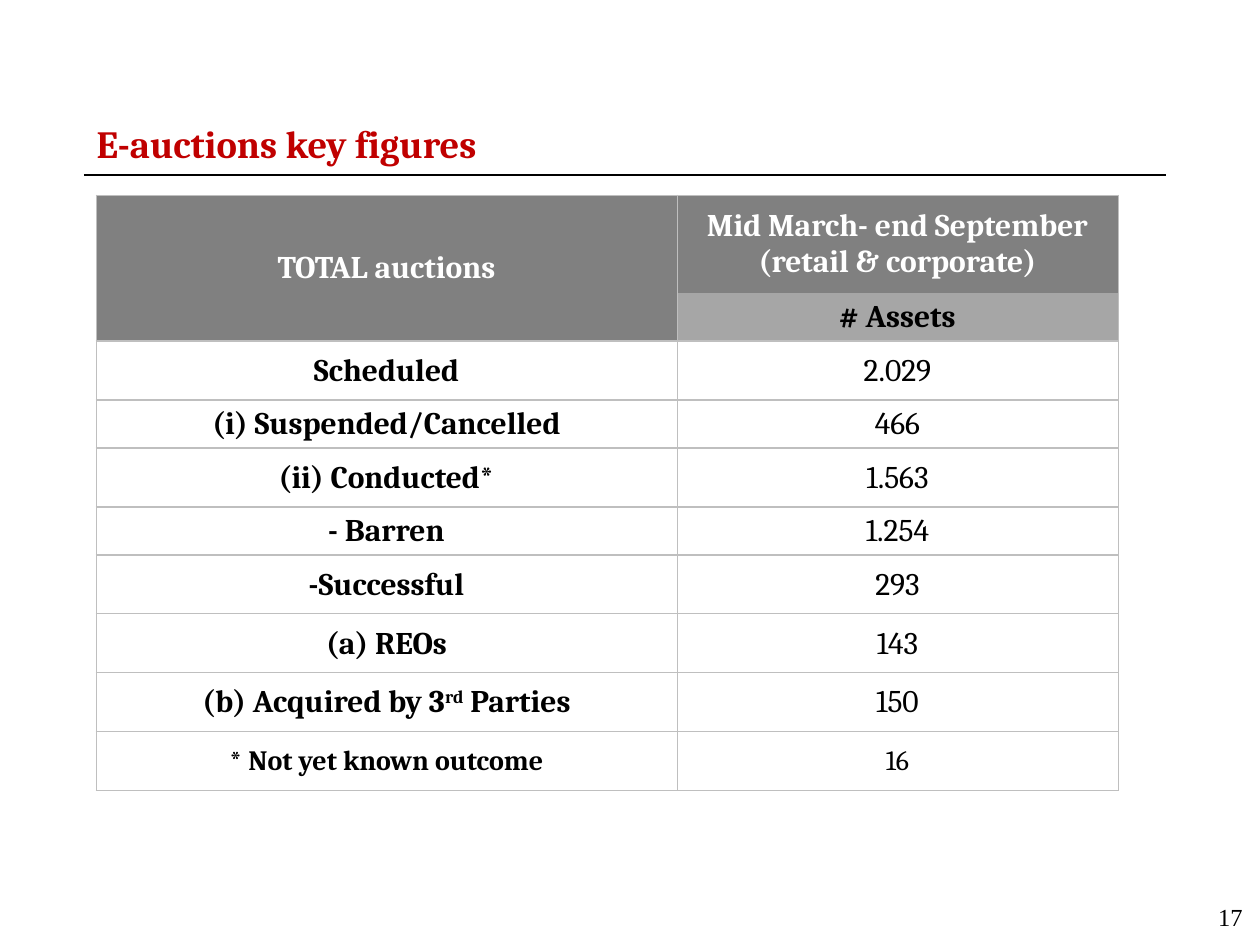
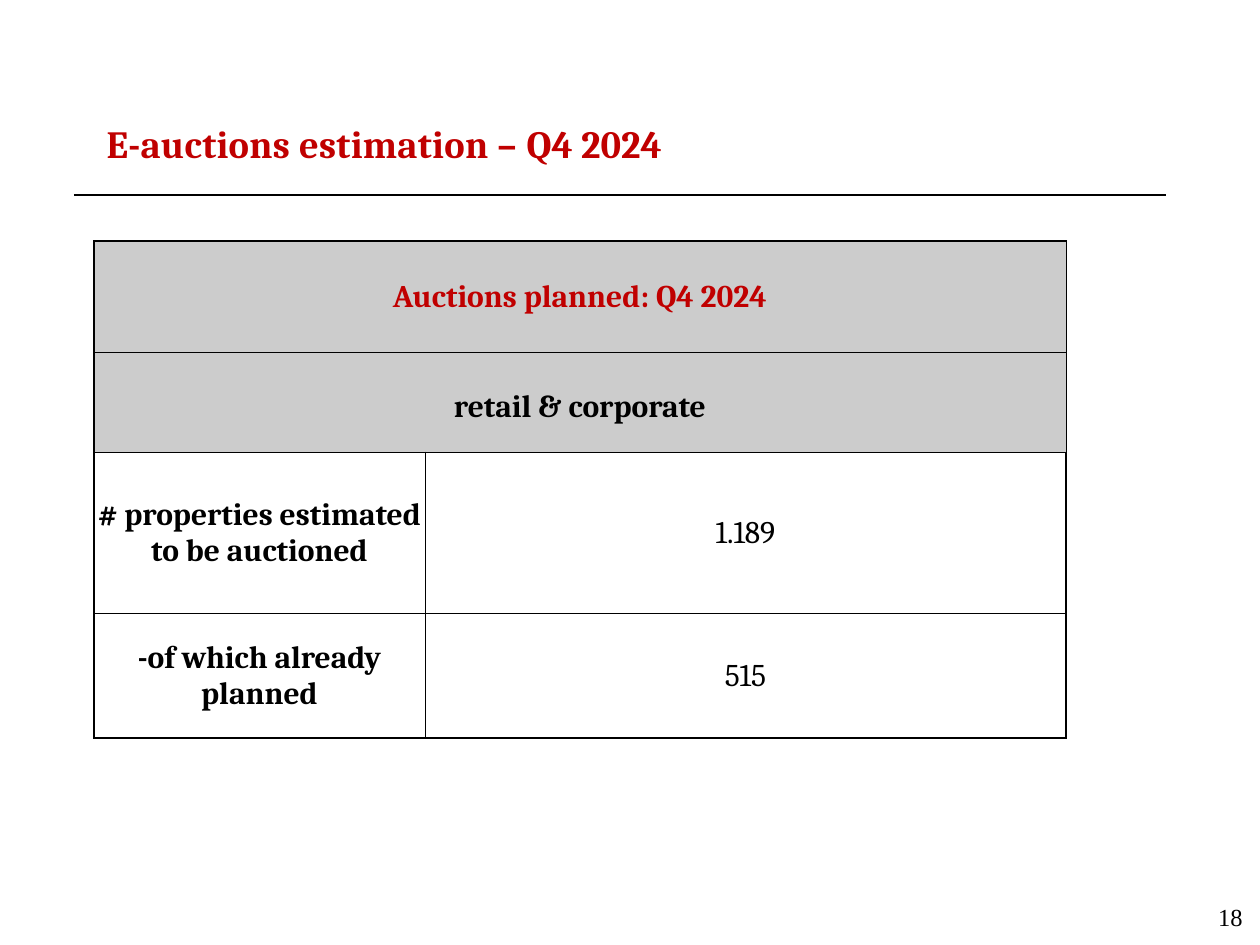
from itertools import product

from lxml import etree
from pptx import Presentation
from pptx.dml.color import RGBColor
from pptx.enum.shapes import MSO_CONNECTOR
from pptx.enum.text import MSO_ANCHOR, MSO_AUTO_SIZE, PP_ALIGN
from pptx.oxml.ns import qn
from pptx.util import Pt

PX = 914400 / 126
STRAIGHT = MSO_CONNECTOR.STRAIGHT
LEFT, CENTER, RIGHT = PP_ALIGN.LEFT, PP_ALIGN.CENTER, PP_ALIGN.RIGHT
MIDDLE = MSO_ANCHOR.MIDDLE
NO_AUTOFIT = MSO_AUTO_SIZE.NONE
TITLE_ONLY = 5

COLORS = {
    "red": "C00000",
    "black": "000000",
    "white": "FFFFFF",
    "head": "808080",
    "subhead": "A6A6A6",
    "planned": "CCCCCC",
    "grid": "BFBFBF",
}
SERIF, PAGE_FONT = "Cambria", "Times New Roman"


def px(length):
    return round(length * PX)


def rgb(name):
    return RGBColor.from_string(COLORS[name])


def style(run, size, color, bold=False, font=SERIF):
    run.font.name = font
    run.font.size = Pt(size)
    run.font.bold = bold
    run.font.color.rgb = rgb(color)


# Shared parts: title, rule and page number
def add_title(slide, box, parts):
    """Each part is its text and its letter spacing in hundredths of a point."""
    title = slide.shapes.title
    title.left, title.top, title.width, title.height = map(px, box)
    frame = title.text_frame
    frame.word_wrap = True
    frame.auto_size = NO_AUTOFIT
    frame.vertical_anchor = MIDDLE
    frame.margin_top, frame.margin_bottom = 0, px(40)
    heading = frame.paragraphs[0]
    heading.alignment = LEFT
    for text, spacing in parts:
        run = heading.add_run()
        run.text = text
        style(run, 22, "red", bold=True)
        run.font._element.set("spc", str(spacing))


def add_rule(slide, left, right, y):
    rule = slide.shapes.add_connector(STRAIGHT, px(left), px(y), px(right), px(y))
    rule.line.color.rgb = rgb("black")
    rule.line.width = Pt(1.5)
    etree.SubElement(rule._element.spPr, qn("a:effectLst"))


def add_page_number(slide, number):
    page = slide.shapes.add_textbox(px(993), px(896), px(262), px(63))
    page.text_frame.word_wrap = True
    line = page.text_frame.paragraphs[0]
    line.text = str(number)
    line.alignment = RIGHT
    style(line.runs[0], 14, "black", font=PAGE_FONT)


def add_frame(prs, number, title_box, title_parts, rule):
    slide = prs.slides.add_slide(prs.slide_layouts[TITLE_ONLY])
    add_title(slide, title_box, title_parts)
    add_rule(slide, *rule)
    add_page_number(slide, number)
    return slide


# Tables
def add_border(cell, side, width, color):
    border = etree.SubElement(cell._tc.get_or_add_tcPr(), qn(f"a:ln{side}"))
    border.set("w", str(Pt(width)))
    if not width:
        etree.SubElement(border, qn("a:noFill"))
        return
    fill = etree.SubElement(border, qn("a:solidFill"))
    etree.SubElement(fill, qn("a:srgbClr")).set("val", COLORS[color])


def add_grid(slide, left, top, widths, heights, row_rules, column_rules, color):
    """Make an empty table; the rules are line widths from edge to edge."""
    table = slide.shapes.add_table(
        len(heights), len(widths), px(left), px(top),
        px(sum(widths)), px(sum(heights))).table
    table.first_row = table.horz_banding = False
    for column, width in zip(table.columns, widths):
        column.width = px(width)
    for row, height in zip(table.rows, heights):
        row.height = px(height)
    for r, c in product(range(len(heights)), range(len(widths))):
        cell = table.cell(r, c)
        add_border(cell, "L", column_rules[c], color)
        add_border(cell, "R", column_rules[c + 1], color)
        add_border(cell, "T", row_rules[r], color)
        add_border(cell, "B", row_rules[r + 1], color)
        cell.fill.background()
        cell.margin_left = cell.margin_right = cell.margin_top = px(1)
        cell.margin_bottom = 0
        cell.vertical_anchor = MIDDLE
    return table


def fill_cell(cell, text, color="black", bold=True, size=18, fill=None):
    """Write text into a cell; parts between carets are superscript."""
    if fill:
        cell.fill.solid()
        cell.fill.fore_color.rgb = rgb(fill)
    line = cell.text_frame.paragraphs[0]
    line.alignment = CENTER
    for i, part in enumerate(text.split("^")):
        run = line.add_run()
        run.text = part
        style(run, size, color, bold)
        if i % 2:
            run.font._element.set("baseline", "30000")


def fill_rows(table, first_row, rows):
    for r, (label, count, size) in enumerate(rows, first_row):
        fill_cell(table.cell(r, 0), label, size=size)
        fill_cell(table.cell(r, 1), count, bold=False, size=size)


def add_key_figures(slide, left, top):
    outcomes = [
        ("Scheduled", "2.029", 18),
        ("(i) Suspended/Cancelled", "466", 18),
        ("(ii) Conducted*", "1.563", 18),
        ("- Barren", "1.254", 18),
        ("-Successful", "293", 18),
        ("(a) REOs", "143", 18),
        ("(b) Acquired by 3^rd^ Parties", "150", 18),
        ("* Not yet known outcome", "16", 16),
    ]
    heights = [98, 48, 59, 48, 59, 48, 59, 59, 59, 59]
    row_rules = [0.5, 0] + [1] * 5 + [0.5] * 4
    table = add_grid(slide, left, top, [581, 441], heights,
                     row_rules, [0.5] * 3, "grid")
    table.cell(0, 0).merge(table.cell(1, 0))
    fill_cell(table.cell(0, 0), "TOTAL auctions", "white", fill="head")
    fill_cell(table.cell(0, 1), "Mid March- end September (retail & corporate)",
              "white", fill="head")
    fill_cell(table.cell(1, 1), "# Assets", fill="subhead")
    fill_rows(table, 2, outcomes)


def add_estimation(slide, left, top):
    table = add_grid(slide, left, top, [331, 641], [111, 100, 162, 124],
                     [1, 0.5, 0.5, 0.5, 1], [1, 0.5, 1], "black")
    headings = [("Auctions planned: Q4 2024", "red"), ("retail & corporate", "black")]
    for r, (heading, color) in enumerate(headings):
        table.cell(r, 0).merge(table.cell(r, 1))
        fill_cell(table.cell(r, 0), heading, color, fill="planned")
    table.cell(1, 0).margin_top = px(10)
    fill_rows(table, 2, [
        ("# properties estimated to be auctioned", "1.189", 18),
        ("-of which already planned", "515", 18),
    ])


def main():
    prs = Presentation()
    prs.slide_width, prs.slide_height = px(1260), px(945)

    # Key figures
    figures = add_frame(prs, 17, (84, 84, 1081, 158),
                        [("E-auctions key figures", 0)], (84, 1166, 175))
    add_key_figures(figures, 96, 195)

    # Estimation for the next quarter
    estimation = add_frame(prs, 18, (94, 84, 1071, 158),
                           [("E-auctions estimation – ", 20), ("Q4 2024", 0)],
                           (74, 1166, 195))
    add_estimation(estimation, 94, 241)

    prs.save("out.pptx")


if __name__ == "__main__":
    main()
